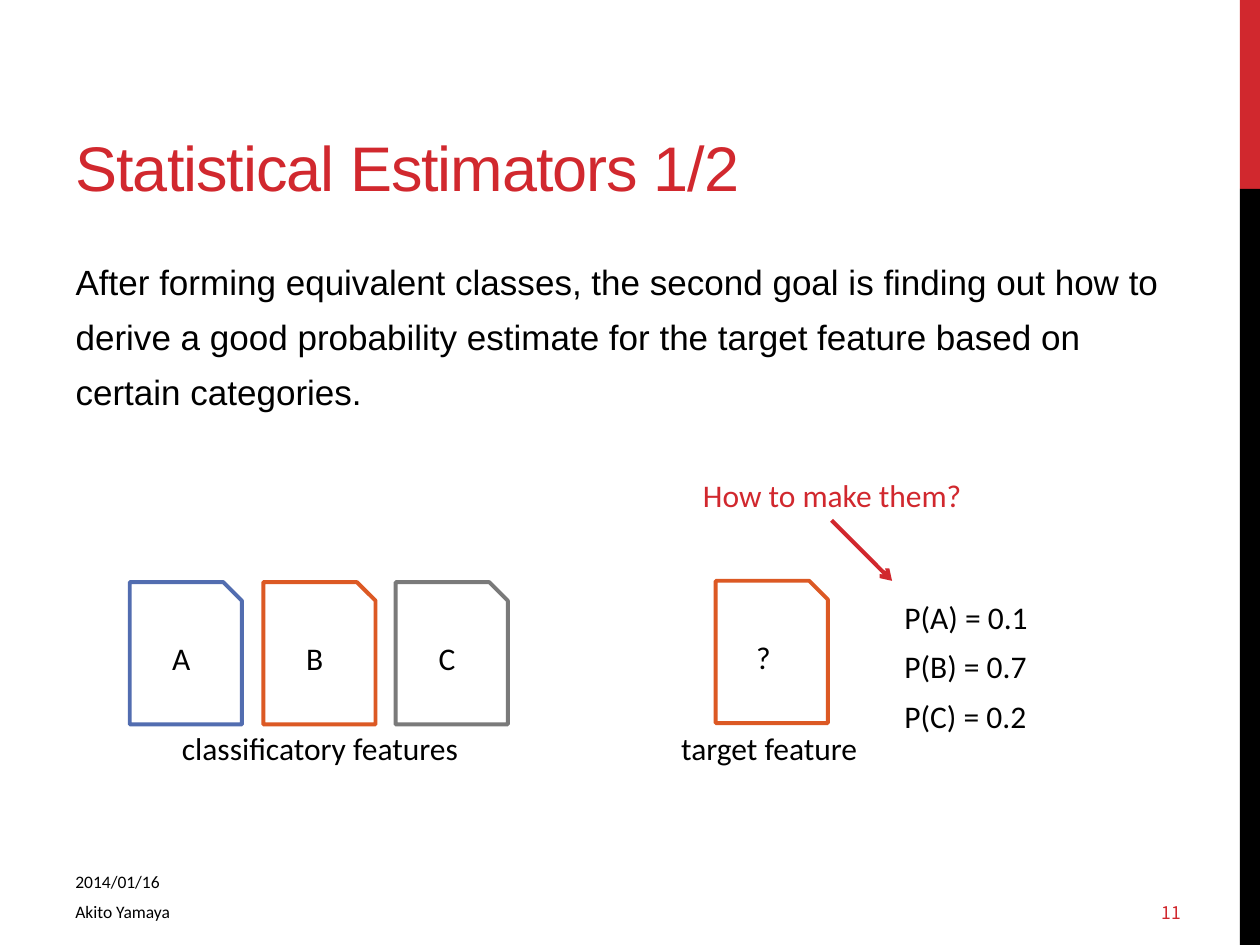
"""Builds the slide on statistical estimators."""
import pptx
import pptx.util
import pptx.dml.color
import pptx.enum.shapes
import pptx.enum.text
import pptx.oxml.ns
import lxml.etree

PX = 9144
ALIGN = pptx.enum.text.PP_ALIGN
ANCHOR = pptx.enum.text.MSO_ANCHOR
FIT = pptx.enum.text.MSO_AUTO_SIZE
SHAPE = pptx.enum.shapes.MSO_SHAPE

THEME = {
    "red": "D1282E", "black": "000000", "white": "FFFFFF",
    "blue": "526DB0", "orange": "DC5924", "gray": "7A7A7A",
    "head": "Arial", "text": "Calibri", "num": "Noto Sans CJK JP",
    "title": 36, "body": 20, "label": 18, "foot": 10, "line": 2.25,
}

TITLE = "Statistical Estimators 1/2"
BODY = ("After forming equivalent classes, the second goal is finding out how to "
        "derive a good probability estimate for the target feature based on "
        "certain categories.")
BARS = [("red", 0, 150), ("black", 150, 600)]
CARDS = [
    ("A", "blue", 103, 462),
    ("B", "orange", 209, 462),
    ("C", "gray", 314, 462),
    ("? ", "orange", 568, 461),
]
CARD = (89, 113)
NOTES = [
    ("target feature", "black", (513, 574, 195, 40)),
    ("classificatory features", "black", (117, 574, 274, 40)),
    ("How to make them?", "red", (537, 373, 247, 40)),
]
PROBS = ["P(A) = 0.1", "P(B) = 0.7", "P(C) = 0.2"]
PROB_BOX = (708, 461, 137, 127)
ARROW = (660, 413, 708, 461)
FEET = [
    ("2014/01/16", "text", "black", (50, 675, 375, 33), ANCHOR.BOTTOM, 0),
    ("Akito Yamaya", "text", "black", (50, 710, 375, 31), ANCHOR.TOP, 5),
    ("11", "num", "red", (912, 704, 144, 40), ANCHOR.MIDDLE, 5),
]


def emu(nums):
    return [n * PX for n in nums]


def color(name):
    return pptx.dml.color.RGBColor.from_string(THEME[name])


def place(shape, box):
    shape.left, shape.top, shape.width, shape.height = emu(box)


def write(para, text, size, font="text", tint="black", align=ALIGN.LEFT):
    para.alignment = align
    run = para.add_run()
    run.text = text
    run.font.size = pptx.util.Pt(THEME[size])
    run.font.name = THEME[font]
    run.font.color.rgb = color(tint)
    return run


def add_box(slide, box, anchor=ANCHOR.TOP):
    frame = slide.shapes.add_textbox(*emu(box)).text_frame
    frame.word_wrap = True
    frame.vertical_anchor = anchor
    return frame


def add_form(slide, kind, box, fill, edge=None):
    shape = slide.shapes.add_shape(kind, *emu(box))
    shape.shadow.inherit = False
    shape.fill.solid()
    shape.fill.fore_color.rgb = color(fill)
    if edge:
        shape.line.color.rgb = color(edge)
        shape.line.width = pptx.util.Pt(THEME["line"])
    else:
        shape.line.fill.background()
    return shape


def add_head(slide):
    title = slide.shapes.title
    place(title, (50, 17, 882, 150))
    frame = title.text_frame
    frame.vertical_anchor = ANCHOR.BOTTOM
    frame.auto_size = FIT.NONE
    run = write(frame.paragraphs[0], TITLE, "title", "head", "red")
    run.font._element.set("spc", "-60")


def add_body(slide):
    body = slide.placeholders[1]
    place(body, (50, 192, 882, 478))
    frame = body.text_frame
    frame.auto_size = FIT.NONE
    para = frame.paragraphs[0]
    write(para, BODY, "body", "head")
    para.line_spacing = 1.3
    para.space_after = pptx.util.Pt(6)
    props = para._p.get_or_add_pPr()
    props.set("marL", "0")
    props.set("indent", "0")
    lxml.etree.SubElement(props, pptx.oxml.ns.qn("a:buNone"))


def add_arrow(slide):
    kind = pptx.enum.shapes.MSO_CONNECTOR.STRAIGHT
    arrow = slide.shapes.add_connector(kind, *emu(ARROW))
    arrow.line.color.rgb = color("red")
    arrow.line.width = pptx.util.Pt(THEME["line"])
    tail = lxml.etree.SubElement(arrow.line._get_or_add_ln(),
                                 pptx.oxml.ns.qn("a:tailEnd"))
    tail.set("type", "arrow")
    lxml.etree.SubElement(arrow._element.spPr, pptx.oxml.ns.qn("a:effectLst"))


def main():
    deck = pptx.Presentation()
    deck.slide_width, deck.slide_height = emu((1000, 750))
    slide = deck.slides.add_slide(deck.slide_layouts[1])

    for tint, top, tall in BARS:
        add_form(slide, SHAPE.RECTANGLE, (984, top, 16, tall), tint)
    add_head(slide)
    add_body(slide)
    for text, font, tint, box, anchor, base in FEET:
        frame = add_box(slide, box, anchor)
        frame.margin_bottom = base * PX
        write(frame.paragraphs[0], text, "foot", font, tint)

    for text, edge, left, top in CARDS:
        card = add_form(slide, SHAPE.SNIP_1_RECTANGLE,
                        (left, top, *CARD), "white", edge)
        frame = card.text_frame
        frame.vertical_anchor = ANCHOR.MIDDLE
        write(frame.paragraphs[0], text, "label", align=ALIGN.CENTER)

    for text, tint, box in NOTES:
        frame = add_box(slide, box)
        frame.auto_size = FIT.SHAPE_TO_FIT_TEXT
        write(frame.paragraphs[0], text, "label", "text", tint, ALIGN.CENTER)

    frame = add_box(slide, PROB_BOX)
    frame.auto_size = FIT.SHAPE_TO_FIT_TEXT
    for i, text in enumerate(PROBS):
        para = frame.add_paragraph() if i else frame.paragraphs[0]
        para.line_spacing = 1.3
        write(para, text, "label")
    add_arrow(slide)

    deck.save("out.pptx")


if __name__ == "__main__":
    main()
